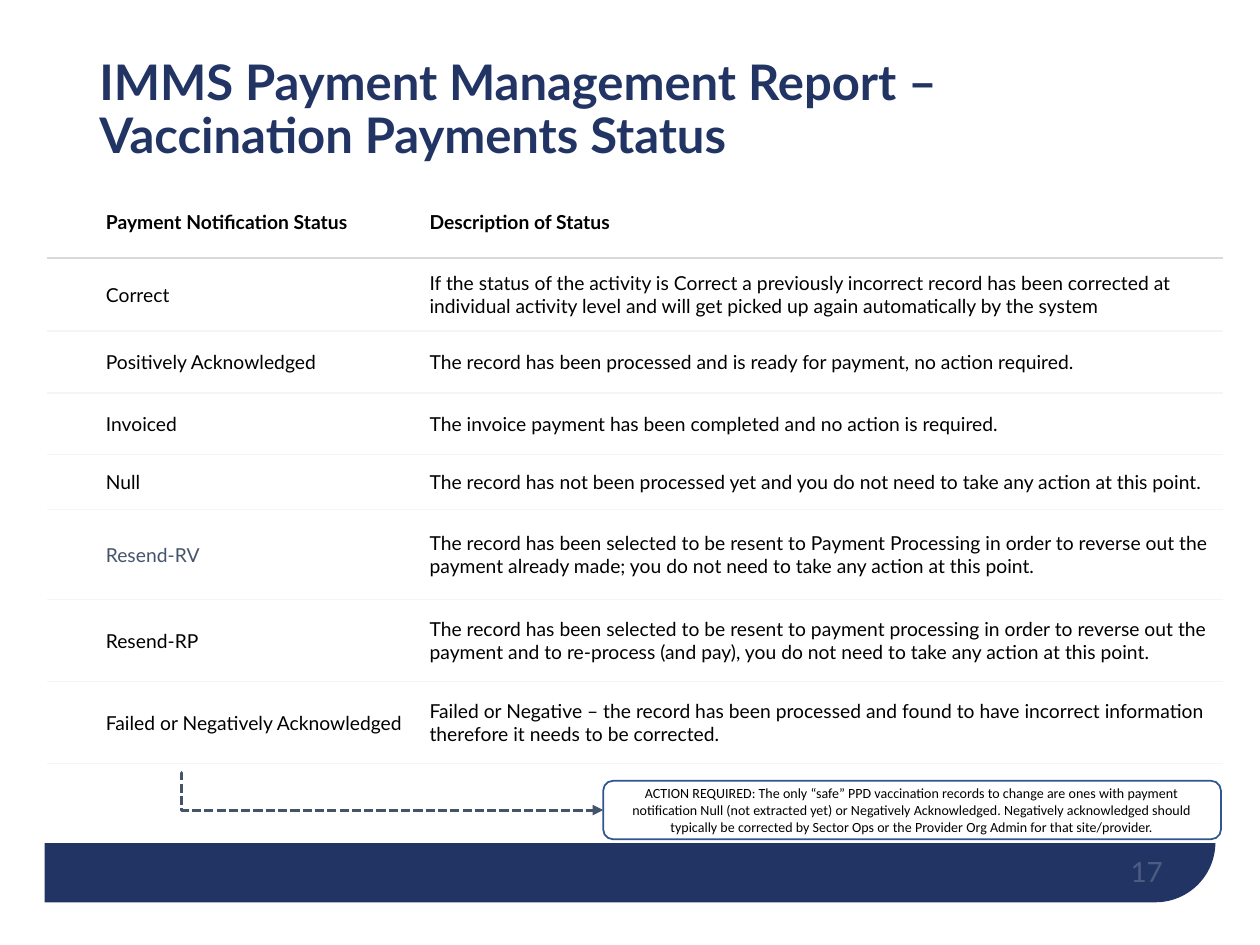
from pptx import Presentation
from pptx.dml.color import RGBColor
from pptx.enum.dml import MSO_LINE
from pptx.enum.shapes import MSO_CONNECTOR, MSO_SHAPE
from pptx.enum.text import MSO_ANCHOR, PP_ALIGN
from pptx.oxml.ns import qn
from pptx.oxml.xmlchemy import OxmlElement
from pptx.util import Pt

LEFT, CENTER, RIGHT = PP_ALIGN.LEFT, PP_ALIGN.CENTER, PP_ALIGN.RIGHT
MIDDLE, BOTTOM = MSO_ANCHOR.MIDDLE, MSO_ANCHOR.BOTTOM
RECTANGLE = MSO_SHAPE.RECTANGLE
ROUNDED = MSO_SHAPE.ROUNDED_RECTANGLE
ONE_ROUND_CORNER = MSO_SHAPE.ROUND_1_RECTANGLE
ELBOW = MSO_CONNECTOR.ELBOW
DASH = MSO_LINE.SQUARE_DOT

NAVY, SLATE, BLUE = "213463", "44546A", "325491"
BLACK, WHITE = "000000", "FFFFFF"
HEADER_RULE, ROW_RULE = ("D9D9D9", 1.5), ("F7F5F3", 1)

COLUMN_WIDTHS = [25.9, 185, 460.1]
ROW_HEIGHTS = [41, 41.8, 35.3, 35.3, 31.4, 51.5, 46.8, 46.8]
STATUSES = [
    ("Payment Notification Status", "Description of Status"),
    ("Correct", "If the status of the activity is Correct a previously incorrect record has been "
     "corrected at individual activity level and will get picked up again automatically by the system"),
    ("Positively Acknowledged",
     "The record has been processed and is ready for payment, no action required."),
    ("Invoiced", "The invoice payment has been completed and no action is required."),
    ("Null", "The record has not been processed yet and you do not need to take any action at this point."),
    ("Resend-RV", "The record has been selected to be resent to Payment Processing in order to "
     "reverse out the payment already made; you do not need to take any action at this point."),
    ("Resend-RP", "The record has been selected to be resent to payment processing in order to reverse out "
     "the payment and to re-process (and pay), you do not need to take any action at this point."),
    ("Failed or Negatively Acknowledged", "Failed or Negative – the record has been processed and found "
     "to have incorrect information therefore it needs to be corrected."),
]
ACTION = (
    "ACTION REQUIRED: The only “safe” PPD vaccination records to change are ones with payment "
    "notification Null (not extracted yet) or Negatively Acknowledged. Negatively acknowledged should "
    "typically be corrected by Sector Ops or the Provider Org Admin for that site/provider."
)


def color(value):
    return RGBColor.from_string(value)


def points(box):
    return [Pt(length) for length in box]


def add_child(parent, tag, **attributes):
    child = OxmlElement(tag)
    for name, value in attributes.items():
        child.set(name, str(value))
    parent.append(child)
    return child


def write_text(text_frame, text, size=11, fill=BLACK, font="Lato", bold=False,
               align=LEFT, anchor=MIDDLE, spacing=None, opacity=None):
    text_frame.word_wrap = True
    text_frame.vertical_anchor = anchor
    paragraph = text_frame.paragraphs[0]
    paragraph.text = text
    paragraph.alignment = align
    paragraph.line_spacing = spacing
    for run in paragraph.runs:
        run.font.name, run.font.size, run.font.bold = font, Pt(size), bold
        run.font.color.rgb = color(fill)
        if opacity:
            for element in run._r.iter(qn("a:srgbClr")):
                add_child(element, "a:alpha", val=opacity * 1000)


def add_box(slide, kind, box, fill=None, line=None):
    shape = slide.shapes.add_shape(kind, *points(box))
    shape.shadow.inherit = False
    if fill:
        shape.fill.solid()
        shape.fill.fore_color.rgb = color(fill)
    else:
        shape.fill.background()
    if line:
        shape.line.color.rgb = color(line)
        shape.line.width = Pt(1)
    else:
        shape.line.fill.background()
    return shape


def add_footer(slide, box):
    left, top, width, height = box
    band = add_box(slide, ONE_ROUND_CORNER, box, fill=NAVY)
    band.adjustments[0] = 0.07
    band.rotation = 180
    band._element.spPr.find(qn("a:xfrm")).set("flipH", "1")
    add_box(slide, RECTANGLE, (0, 0, 720, 481.7), fill=WHITE)
    number = slide.shapes.add_textbox(*points((left + width - 192, top + height - 36.7, 162, 28.8)))
    frame = number.text_frame
    frame.margin_left = frame.margin_top = frame.margin_right = frame.margin_bottom = 0
    write_text(frame, "17", size=16, fill=WHITE, align=RIGHT, anchor=BOTTOM, opacity=20)


def add_title(slide, box):
    title = slide.shapes.add_textbox(*points(box))
    write_text(title.text_frame, "IMMS Payment Management Report – \vVaccination Payments Status",
               size=28, fill=NAVY, bold=True, spacing=0.9)


def set_border(cell, tag, rule):
    rule_color, width = rule
    line = add_child(cell._tc.get_or_add_tcPr(), tag, w=Pt(width))
    add_child(add_child(line, "a:solidFill"), "a:srgbClr", val=rule_color)


def add_status_table(slide, box):
    table = slide.shapes.add_table(len(ROW_HEIGHTS), len(COLUMN_WIDTHS), *points(box)).table
    table.first_row = table.horz_banding = False
    for column, width in zip(table.columns, COLUMN_WIDTHS):
        column.width = Pt(width)
    for index, (row, height) in enumerate(zip(table.rows, ROW_HEIGHTS)):
        row.height = Pt(height)
        for cell, text in zip(row.cells, ("", *STATUSES[index])):
            if index:
                set_border(cell, "a:lnT", HEADER_RULE if index == 1 else ROW_RULE)
            set_border(cell, "a:lnB", ROW_RULE if index else HEADER_RULE)
            cell.fill.background()
            if text:
                cell.margin_left = cell.margin_top = cell.margin_right = cell.margin_bottom = Pt(7.2)
                cell.vertical_anchor = MIDDLE
                write_text(cell.text_frame, text, bold=index == 0,
                           fill=SLATE if text == "Resend-RV" else BLACK)


def add_action_note(slide, box, arrow_start):
    left, top, width, height = box
    note = add_box(slide, ROUNDED, box, line=BLUE)
    write_text(note.text_frame, ACTION, size=8, font="Calibri", align=CENTER)
    arrow = slide.shapes.add_connector(ELBOW, *points((*arrow_start, left, top + height / 2)))
    arrow.line.color.rgb = color(SLATE)
    arrow.line.width = Pt(1.75)
    arrow.line.dash_style = DASH
    add_child(arrow.line._get_or_add_ln(), "a:tailEnd", type="triangle")
    properties = arrow._element.spPr
    add_child(properties, "a:effectLst")
    guides = properties.find(qn("a:prstGeom")).get_or_add_avLst()
    add_child(guides, "a:gd", name="adj1", fmla="val 200")


def main():
    presentation = Presentation()
    presentation.slide_width, presentation.slide_height = Pt(720), Pt(540)
    slide = presentation.slides.add_slide(presentation.slide_layouts[6])
    add_footer(slide, (25.5, 26.6, 669, 489))
    add_title(slide, (49.7, 21.6, 620.6, 84.2))
    add_status_table(slide, (27.4, 106.5, sum(COLUMN_WIDTHS), sum(ROW_HEIGHTS)))
    add_action_note(slide, (344.7, 446.2, 353, 33.4), (103.3, 441.2))
    presentation.save("out.pptx")


if __name__ == "__main__":
    main()
